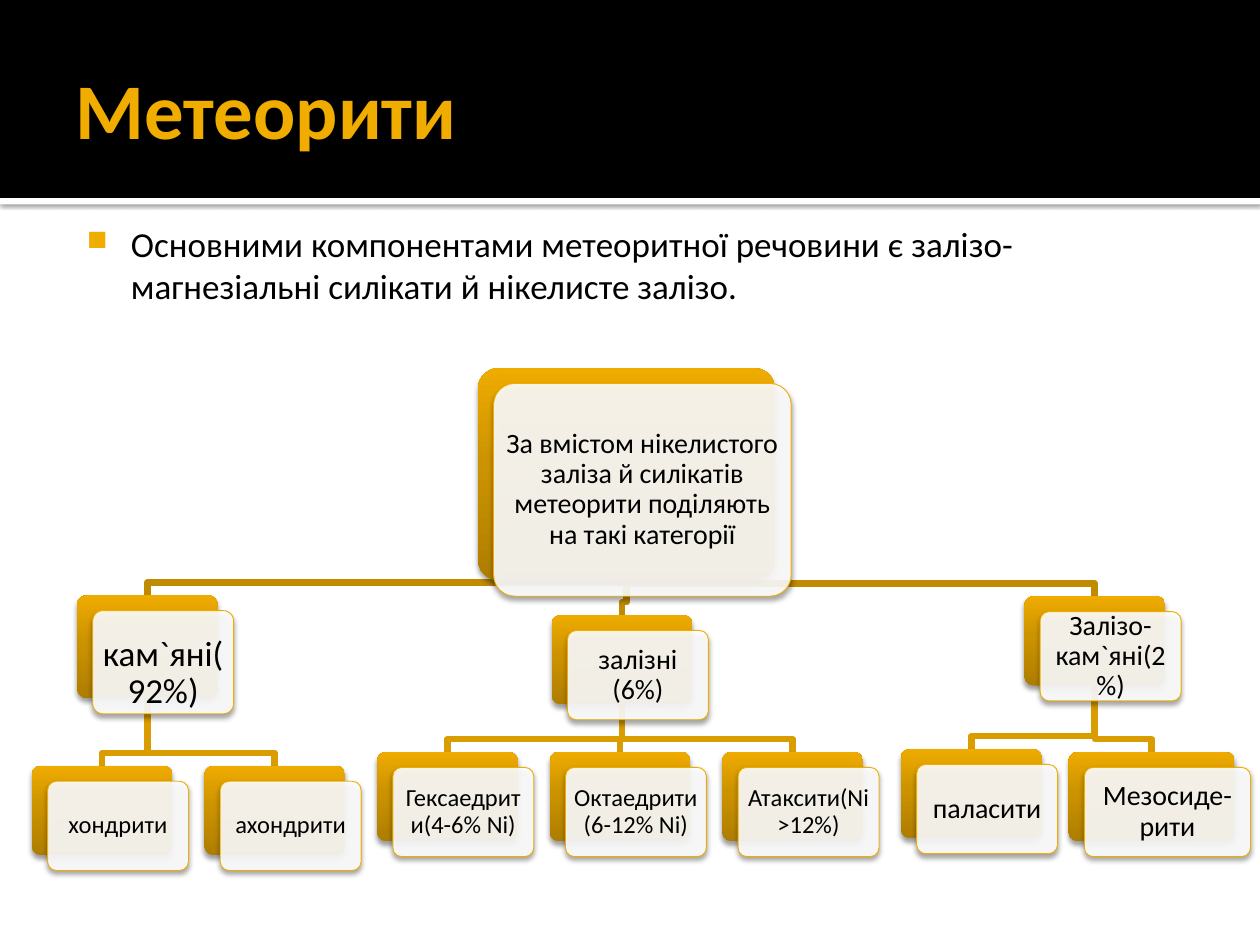
from collections import namedtuple
from copy import deepcopy

from pptx import Presentation
from pptx.dml.color import RGBColor
from pptx.enum.shapes import MSO_SHAPE as Shape
from pptx.enum.text import MSO_ANCHOR as Anchor, MSO_AUTO_SIZE as AutoSize, PP_ALIGN as Align
from pptx.oxml import parse_xml
from pptx.oxml.ns import nsdecls, qn
from pptx.util import Cm, Pt

BLACK = RGBColor(0x00, 0x00, 0x00)
WHITE = RGBColor(0xFF, 0xFF, 0xFF)
GOLD = RGBColor(0xF0, 0xAD, 0x00)
ROOT_LINE = RGBColor(0xC0, 0x8B, 0x00)
LEAF_LINE = RGBColor(0xDA, 0x9D, 0x00)
GRADIENT = [
    (0, RGBColor(0xAE, 0x7D, 0x00)),
    (0.55, RGBColor(0xCC, 0x93, 0x00)),
    (1, RGBColor(0xEE, 0xAB, 0x00)),
]
INSETS = {14: 0.15, 16: 0.18, 20: 0.13}
CARD_SHIFT = (0.32, 0.31)
ELBOW_RISE = 0.26
CORNER = 0.1

Node = namedtuple("Node", "text left top width height size lead children", defaults=(0, ()))


def leaf(text, left, top, size, width=2.84):
    return Node(text, left, top, width, 1.8, size)


IRON_LEAVES = ["Гексаедрити(4-6% Ni)", "Октаедрити(6-12% Ni)", "Атаксити(Ni>12%)"]
STONY = Node("кам`яні(92%)", 1.55, 12, 2.84, 2.08, 20, 0.46, [
    leaf("хондрити", 0.64, 15.44, 14),
    leaf("ахондрити", 4.12, 15.44, 14),
])
IRON = Node("залізні (6%)", 11.12, 12.4, 2.84, 1.8, 16, 0, [
    leaf(text, 7.6 + 3.48 * column, 15.16, 14) for column, text in enumerate(IRON_LEAVES)
])
MIXED = Node("Залізо-кам`яні(2%)", 20.65, 12.02, 2.84, 1.8, 16, 0, [
    leaf("паласити", 18.16, 15.1, 16),
    leaf("Мезосиде-рити", 21.54, 15.16, 16, 3.35),
])
ROOT = Node(
    "За вмістом нікелистого заліза й силікатів метеорити поділяють на такі категорії",
    9.63, 7.42, 6, 4.29, 16, 0, [STONY, IRON, MIXED],
)


class SlideBuilder:
    """Holds the slide style and draws each kind of element on the page."""

    font_name = "Calibri"

    def __init__(self, page):
        self.page = page

    def apply(self, target, values):
        for name, value in values.items():
            setattr(target, name, value)

    def add_text(self, frame, text, size, margins, color=BLACK, bold=False, **paragraph):
        sides = ("margin_left", "margin_top", "margin_right", "margin_bottom")
        self.apply(frame, {side: Cm(value) for side, value in zip(sides, margins)})
        self.apply(frame, {"word_wrap": True, "auto_size": AutoSize.NONE})
        para = frame.paragraphs[0]
        self.apply(para, paragraph)
        span = para.add_run()
        span.text = text
        self.apply(span.font, {"name": self.font_name, "size": Pt(size), "bold": bold})
        span.font.color.rgb = color
        return para

    def shadow(self, shape, alpha, blur, distance):
        effects = shape.element.spPr.find(qn("a:effectLst"))
        effects.append(parse_xml(
            f'<a:outerShdw {nsdecls("a")} blurRad="{Pt(blur)}" dist="{Pt(distance)}" '
            f'dir="5400000" rotWithShape="0"><a:srgbClr val="{BLACK}">'
            f'<a:alpha val="{alpha * 1000}"/></a:srgbClr></a:outerShdw>'
        ))

    def shape(self, kind, left, top, width, height, color=None):
        box = self.page.shapes.add_shape(kind, Cm(left), Cm(top), Cm(width), Cm(height))
        box.shadow.inherit = False
        box.line.fill.background()
        if color is not None:
            box.fill.solid()
            box.fill.fore_color.rgb = color
        return box

    def title(self, text, left, top, width, height):
        box = self.page.shapes.title
        box.element.getparent().append(box.element)
        place = {"left": left, "top": top, "width": width, "height": height}
        self.apply(box, {name: Cm(value) for name, value in place.items()})
        box.text_frame.vertical_anchor = Anchor.MIDDLE
        self.add_text(box.text_frame, text, 45, (0.25, 0.13, 0.13, 0.13), GOLD, True,
                      alignment=Align.LEFT)

    def bullet(self, text, left, top, width, height):
        box = self.page.shapes.add_textbox(Cm(left), Cm(top), Cm(width), Cm(height))
        para = self.add_text(box.text_frame, text, 20, (0.15, 0.25, 0.25, 0.13))
        props = para._p.get_or_add_pPr()
        props.set("marL", str(Cm(1.22)))
        props.set("indent", str(Cm(-0.89)))
        for body in (
            f'<a:buClr {nsdecls("a")}><a:srgbClr val="{GOLD}"/></a:buClr>',
            f'<a:buSzPct {nsdecls("a")} val="80000"/>',
            f'<a:buChar {nsdecls("a")} char="■"/>',
        ):
            props.append(parse_xml(body))

    def branch(self, parent, child, color):
        start = parent.left + parent.width / 2
        end = child.left + child.width / 2
        elbow = child.top - ELBOW_RISE
        points = [(start, elbow), (end, elbow), (end, child.top)]
        outline = self.page.shapes.build_freeform(Cm(start), Cm(parent.top + parent.height))
        outline.add_line_segments([(Cm(x), Cm(y)) for x, y in points], close=False)
        line = outline.convert_to_shape()
        line.shadow.inherit = False
        line.fill.background()
        line.line.color.rgb = color
        line.line.width = Pt(3.78)

    def branches(self, node, color=ROOT_LINE):
        for child in node.children:
            self.branches(child, LEAF_LINE)
            self.branch(node, child, color)

    def rounded(self, left, top, node, color=None):
        box = self.shape(Shape.ROUNDED_RECTANGLE, left, top, node.width, node.height, color)
        box.adjustments[0] = CORNER
        self.shadow(box, 38, 3.1, 2)
        return box

    def backing(self, node):
        box = self.rounded(node.left, node.top, node)
        box.fill.gradient()
        box.fill.gradient_angle = 90
        stops = box.element.spPr.find(".//" + qn("a:gsLst"))
        stops.append(deepcopy(stops[0]))
        for stop, (position, color) in zip(box.fill.gradient_stops, GRADIENT):
            stop.position = position
            stop.color.rgb = color

    def card(self, node):
        shift_x, shift_y = CARD_SHIFT
        box = self.rounded(node.left + shift_x, node.top + shift_y, node, WHITE)
        color = box.element.spPr.find(qn("a:solidFill"))[0]
        color.append(parse_xml(f'<a:alpha {nsdecls("a")} val="90000"/>'))
        box.line.color.rgb = GOLD
        box.line.width = Pt(0.5)
        box.text_frame.vertical_anchor = Anchor.MIDDLE
        inset = INSETS[node.size] - 0.29 * CORNER * min(node.width, node.height)
        self.add_text(box.text_frame, node.text, node.size,
                      (inset, inset + node.lead, inset, inset),
                      alignment=Align.CENTER, line_spacing=0.9)

    def nodes(self, node):
        self.backing(node)
        self.card(node)
        for child in node.children:
            self.nodes(child)


def main():
    deck = Presentation()
    deck.slide_width, deck.slide_height = Cm(25.4), Cm(19.05)
    builder = SlideBuilder(deck.slides.add_slide(deck.slide_layouts[5]))
    strip = builder.shape(Shape.RECTANGLE, 0, 3.99, 25.4, 0.13, WHITE)
    builder.shadow(strip, 60, 2.5, 0.8)
    builder.shape(Shape.RECTANGLE, 0, 0, 25.4, 3.99, BLACK)
    builder.title("Метеорити", 1.27, 0.43, 22.86, 3.48)
    builder.bullet(
        "Основними компонентами метеоритної речовини є залізо-магнезіальні силікати "
        "й нікелисте залізо.", 1.27, 4.24, 22.86, 2.11)
    builder.branches(ROOT)
    builder.nodes(ROOT)
    deck.save("out.pptx")


if __name__ == "__main__":
    main()
